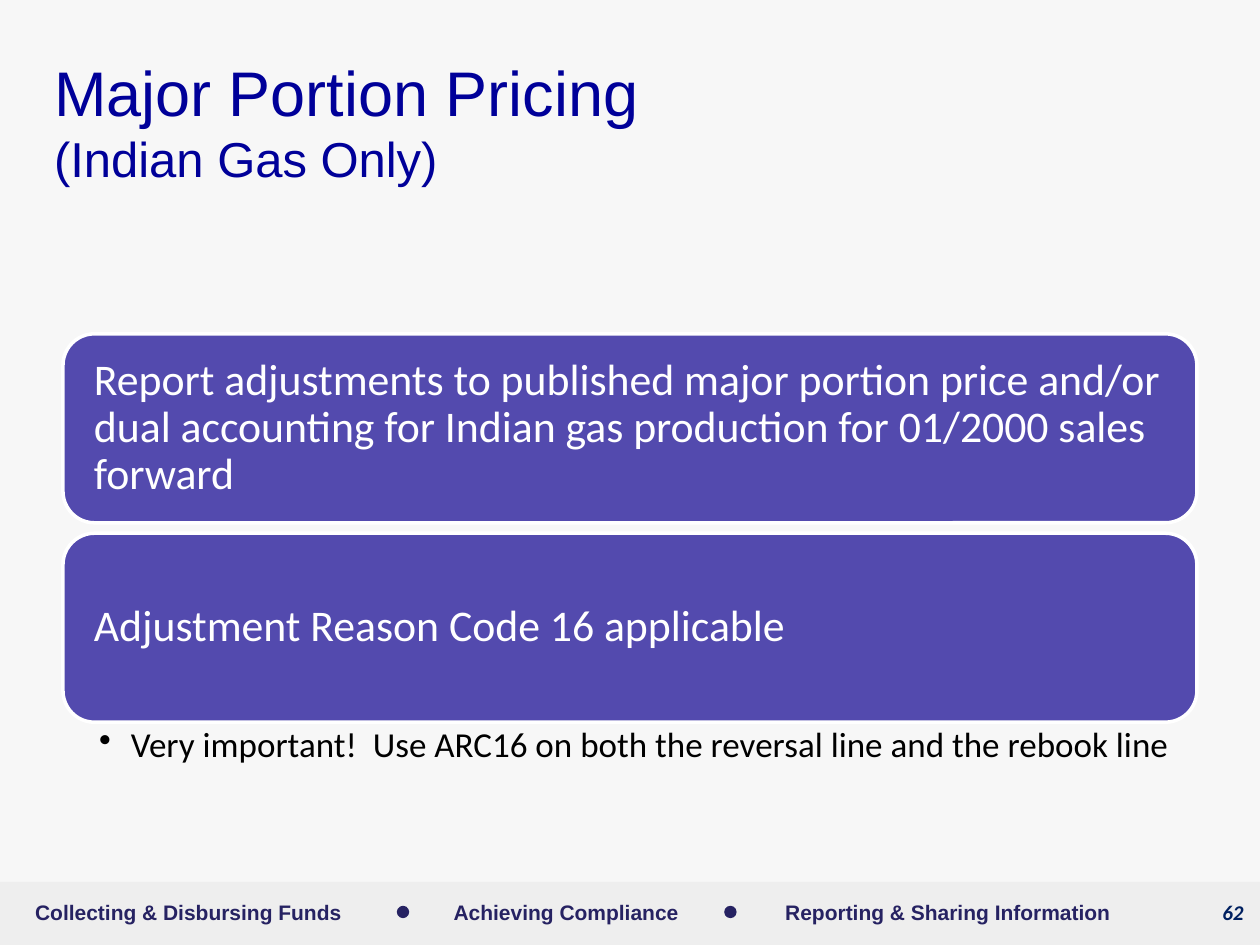
from lxml import etree
from pptx import Presentation
from pptx.dml.color import RGBColor
from pptx.enum.shapes import MSO_SHAPE
from pptx.enum.text import MSO_ANCHOR, PP_ALIGN
from pptx.oxml.ns import qn
from pptx.util import Cm, Pt

RECT, ROUND, OVAL = MSO_SHAPE.RECTANGLE, MSO_SHAPE.ROUNDED_RECTANGLE, MSO_SHAPE.OVAL
TOP, MIDDLE = MSO_ANCHOR.TOP, MSO_ANCHOR.MIDDLE
LEFT, CENTER, RIGHT = PP_ALIGN.LEFT, PP_ALIGN.CENTER, PP_ALIGN.RIGHT

TITLE = ["Major Portion Pricing", "(Indian Gas Only)"]
CARDS = [
    "Report adjustments to published major portion price and/or dual accounting "
    "for Indian gas production for 01/2000 sales forward",
    "Adjustment Reason Code 16 applicable",
]
NOTE = "Very important!  Use ARC16 on both the reversal line and the rebook line"
GOALS = [  # text, left, width in cm
    ("Collecting & Disbursing Funds", 0.18, 7.24),
    ("Achieving Compliance", 8.81, 5.21),
    ("Reporting & Sharing Information", 15.44, 7.34),
]
DOTS = [8, 14.6]
PAGE = "62"

THEME = {
    "back": "F7F7F7", "bar": "EEEEEE", "goal": "262262", "title": "000099",
    "card": "534AAE", "light": "FFFFFF", "note": "000000", "page": "002060",
    "head": "Arial", "body": "Calibri",
    "title_pt": [36, 28], "card_pt": 25, "note_pt": 20, "foot_pt": 12,
}


def tint(name):
    return RGBColor.from_string(THEME[name])


def style(font, face, size, color, bold=False, italic=False):
    font.name, font.size = THEME[face], Pt(size)
    font.color.rgb = tint(color)
    font.bold, font.italic = bold, italic


def box(slide, kind, place, fill, line=None):
    shape = slide.shapes.add_shape(kind, *map(Cm, place))
    shape.shadow.inherit = False
    shape.fill.solid()
    shape.fill.fore_color.rgb = tint(fill)
    if line:
        shape.line.color.rgb = tint(line)
        shape.line.width = Pt(2)
    else:
        shape.line.fill.background()
    return shape


def write(shape, text, align, anchor, pads=(0.25, 0.13, 0.25, 0.13)):
    """Set the text of a shape and return its paragraph."""
    frame = shape.text_frame
    frame.word_wrap, frame.vertical_anchor = True, anchor
    (frame.margin_left, frame.margin_top,
     frame.margin_right, frame.margin_bottom) = map(Cm, pads)
    para = frame.paragraphs[0]
    para.text, para.alignment = text, align
    return para


def label(slide, place, *words):
    return write(slide.shapes.add_textbox(*map(Cm, place)), *words)


def add_title(slide):
    title = slide.shapes.title
    title.left, title.top, title.width, title.height = map(Cm, (0.84, 0.84, 19.89, 3.18))
    para = write(title, "", LEFT, MIDDLE)
    for i, (text, size) in enumerate(zip(TITLE, THEME["title_pt"])):
        if i:
            para.add_line_break()
        run = para.add_run()
        run.text = text
        style(run.font, "head", size, "title")


def add_cards(slide):
    left, top, wide, high, step = 1.27, 6.73, 22.86, 3.81, 4.02
    for i, text in enumerate(CARDS):
        card = box(slide, ROUND, (left, top + i * step, wide, high), "card", "light")
        para = write(card, text, LEFT, MIDDLE, (0.44,) * 4)
        para.line_spacing = 0.9
        style(para.font, "body", THEME["card_pt"], "light")

    end = top + step * (len(CARDS) - 1) + high
    para = label(slide, (left, end + 0.03, wide, 1.14), NOTE, LEFT, TOP,
                 (0.73, 0.08, 0.48, 0.08))
    para.line_spacing = 0.9
    props = para._p.get_or_add_pPr()
    props.set("marL", str(Cm(0.64)))
    props.set("indent", str(-Cm(0.64)))
    etree.SubElement(props, qn("a:buChar"), char="•")
    style(para.font, "body", THEME["note_pt"], "note")


def add_footer(slide):
    size = THEME["foot_pt"]
    box(slide, RECT, (0, 17.78, 25.4, 1.27), "bar")
    for text, left, wide in GOALS:
        para = label(slide, (left, 18.01, wide, 0.76), text, CENTER, MIDDLE)
        style(para.font, "head", size, "goal", bold=True)
    for left in DOTS:
        box(slide, OVAL, (left, 18.26, 0.25, 0.25), "goal")
    para = label(slide, (24, 18.01, 1.32, 1.02), PAGE, RIGHT, TOP)
    style(para.font, "body", size, "page", bold=True, italic=True)


def main():
    deck = Presentation()
    deck.slide_width, deck.slide_height = Cm(25.4), Cm(19.05)
    slide = deck.slides.add_slide(deck.slide_layouts[5])
    slide.background.fill.solid()
    slide.background.fill.fore_color.rgb = tint("back")
    add_footer(slide)
    add_title(slide)
    add_cards(slide)
    deck.save("out.pptx")


if __name__ == "__main__":
    main()
